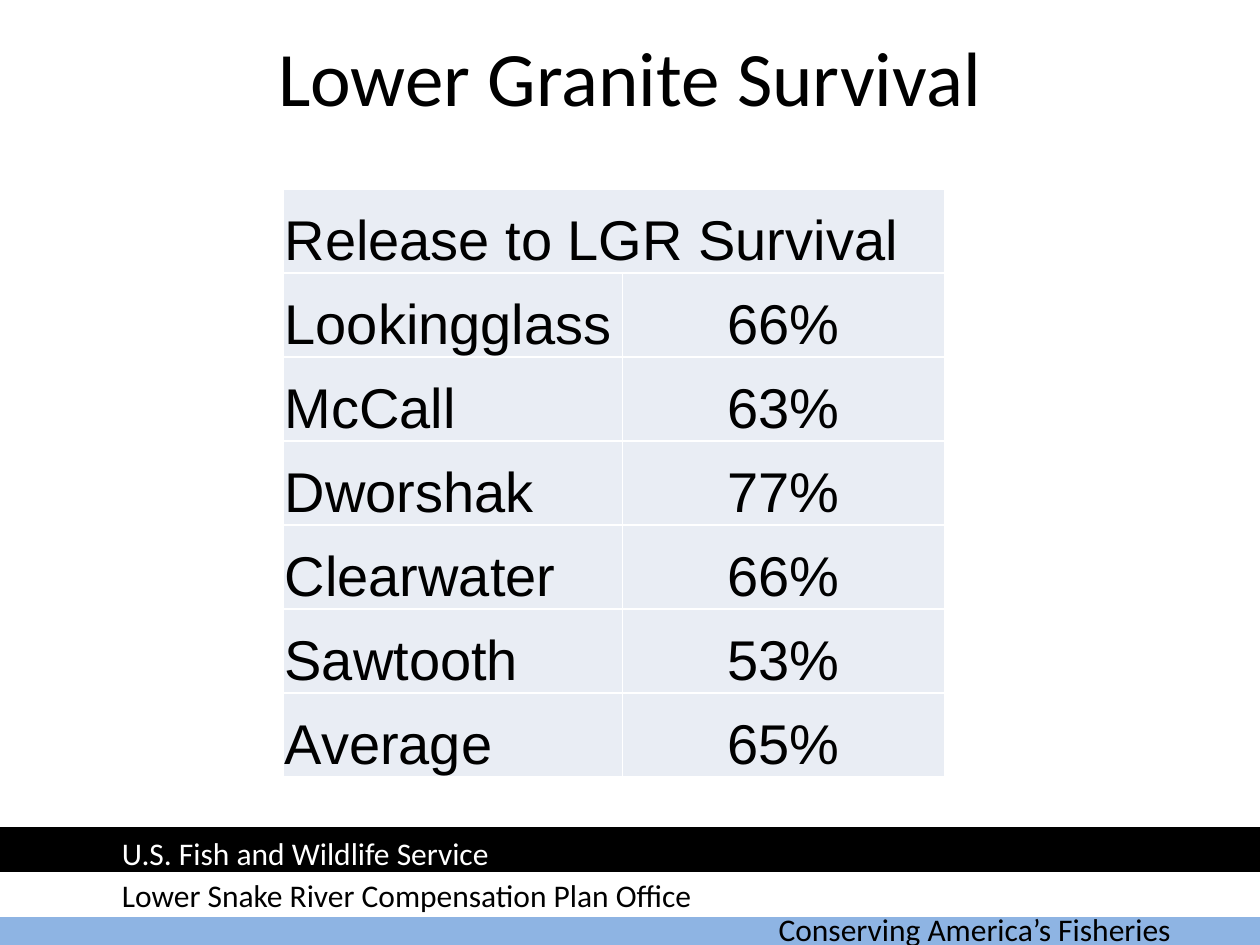
from lxml.etree import SubElement
from pptx import Presentation
from pptx.dml.color import RGBColor
from pptx.enum.shapes import MSO_SHAPE
from pptx.enum.text import MSO_ANCHOR, MSO_AUTO_SIZE, PP_ALIGN
from pptx.oxml.ns import qn
from pptx.util import Pt

TITLE = "Lower Granite Survival"
HEADING = "Release to LGR Survival"
SURVIVAL = [
    ("Lookingglass", "66%"),
    ("McCall", "63%"),
    ("Dworshak", "77%"),
    ("Clearwater", "66%"),
    ("Sawtooth", "53%"),
    ("Average", "65%"),
]
BANDS = [
    (-0.7, 516.2, "8EB4E3"),
    (0, 499, "FFFFFF"),
    (0, 473.8, "000000"),
]
FOOTER_LINES = [
    ("Conserving America’s Fisheries", 437.8, 516.2, 264, "000000"),
    ("U.S. Fish and Wildlife Service", 62.6, 473, 299.5, "FFFFFF"),
    ("Lower Snake River Compensation Plan Office", 62.6, 496.8, 358, "000000"),
]
SLIDE_WIDTH, SLIDE_HEIGHT = 720, 540
BAND_HEIGHT, FOOTER_HEIGHT = 23.8, 29
COLUMN_WIDTHS = (193.6, 184.4)
ROW_HEIGHT = 48


def color(value):
    return RGBColor.from_string(value)


def style(paragraph, size, font_name, font_color, align=PP_ALIGN.LEFT):
    paragraph.alignment = align
    paragraph.font.size = Pt(size)
    paragraph.font.name = font_name
    paragraph.font.color.rgb = color(font_color)


def add_band(slide, left, top, fill):
    band = slide.shapes.add_shape(
        MSO_SHAPE.RECTANGLE, Pt(left), Pt(top), Pt(SLIDE_WIDTH), Pt(BAND_HEIGHT))
    band.shadow.inherit = False
    band.fill.solid()
    band.fill.fore_color.rgb = color(fill)
    band.line.color.rgb = color(fill)
    band.line.width = Pt(2)


def add_footer_line(slide, text, left, top, width, font_color):
    footer = slide.shapes.add_textbox(
        Pt(left), Pt(top), Pt(width), Pt(FOOTER_HEIGHT)).text_frame
    footer.word_wrap = True
    footer.auto_size = MSO_AUTO_SIZE.SHAPE_TO_FIT_TEXT
    footer.text = text
    style(footer.paragraphs[0], 18, "Calibri", font_color)


def format_cell(cell, align):
    properties = cell._tc.get_or_add_tcPr()
    for side in ("lnL", "lnR", "lnT", "lnB"):
        border = SubElement(properties, qn(f"a:{side}"), w=str(Pt(1)))
        fill = SubElement(border, qn("a:solidFill"))
        SubElement(fill, qn("a:srgbClr"), val="FFFFFF")
    cell.fill.solid()
    cell.fill.fore_color.rgb = color("E9EDF4")
    cell.margin_left = cell.margin_right = cell.margin_top = Pt(0.7)
    cell.margin_bottom = Pt(0)
    cell.vertical_anchor = MSO_ANCHOR.BOTTOM
    style(cell.text_frame.paragraphs[0], 32, "Arial", "000000", align)


def add_survival_table(slide):
    rows = [(HEADING, ""), *SURVIVAL]
    table = slide.shapes.add_table(
        len(rows), len(COLUMN_WIDTHS), Pt(162), Pt(108),
        Pt(sum(COLUMN_WIDTHS)), Pt(ROW_HEIGHT * len(rows))).table
    table.first_row = False
    table.horz_banding = False
    for column, width in zip(table.columns, COLUMN_WIDTHS):
        column.width = Pt(width)
    for r, row in enumerate(rows):
        for c, text in enumerate(row):
            cell = table.cell(r, c)
            cell.text = text
            format_cell(cell, PP_ALIGN.CENTER if c else PP_ALIGN.LEFT)
    table.cell(0, 0).merge(table.cell(0, 1))


def main():
    presentation = Presentation()
    presentation.slide_width = Pt(SLIDE_WIDTH)
    presentation.slide_height = Pt(SLIDE_HEIGHT)
    slide = presentation.slides.add_slide(presentation.slide_layouts[5])

    for band in BANDS:
        add_band(slide, *band)
    for footer_line in FOOTER_LINES:
        add_footer_line(slide, *footer_line)

    title = slide.shapes.title
    title.left, title.top, title.width, title.height = Pt(36), Pt(12), Pt(648), Pt(63)
    title.text_frame.text = TITLE
    title.text_frame.vertical_anchor = MSO_ANCHOR.MIDDLE
    style(title.text_frame.paragraphs[0], 44, "Calibri", "000000", PP_ALIGN.CENTER)

    add_survival_table(slide)
    presentation.save("out.pptx")


if __name__ == "__main__":
    main()
